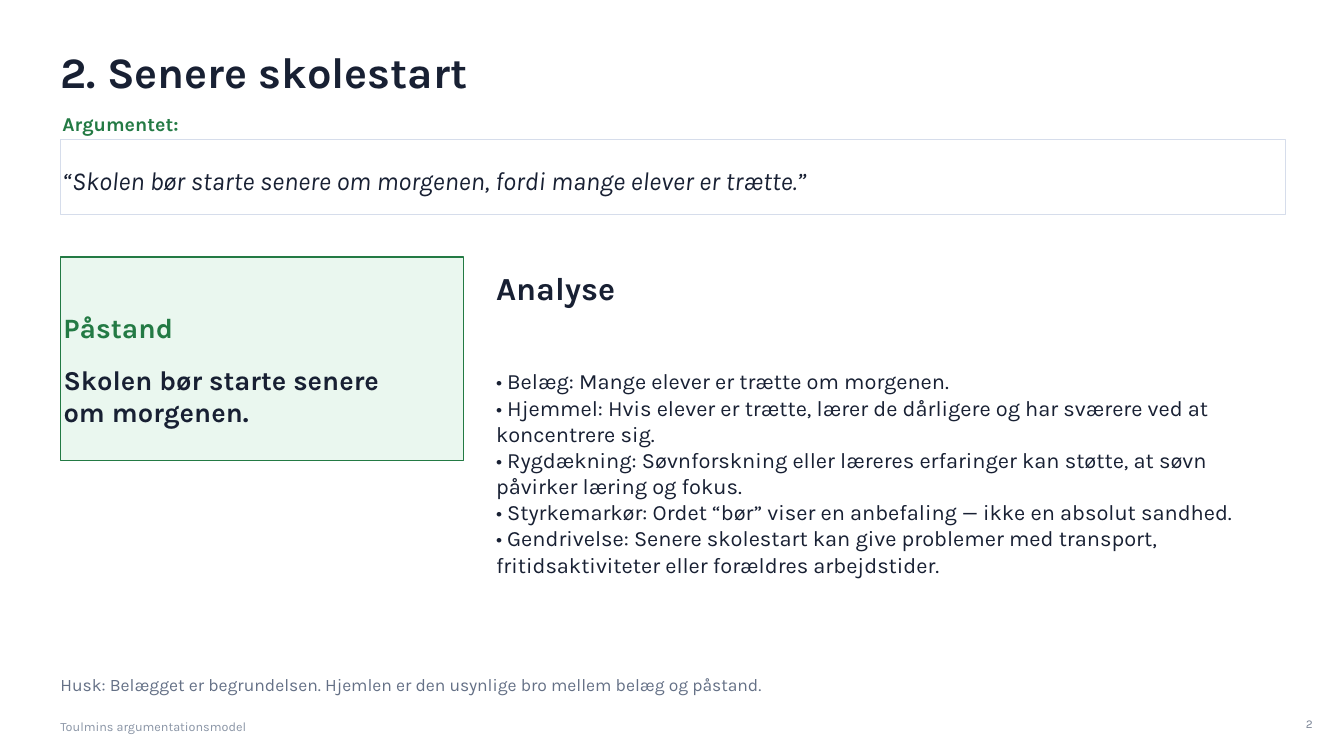
from dataclasses import dataclass

from pptx import Presentation
from pptx.dml.color import RGBColor
from pptx.enum.shapes import MSO_SHAPE as Shape
from pptx.enum.text import MSO_ANCHOR as Anchor, MSO_AUTO_SIZE as AutoSize, PP_ALIGN as Align
from pptx.slide import Slide
from pptx.text.text import TextFrame
from pptx.util import Inches, Pt

FONT = "Karla"
INK = RGBColor(0x18, 0x20, 0x33)
GREEN = RGBColor(0x23, 0x7A, 0x44)
PALE_GREEN = RGBColor(0xEA, 0xF7, 0xEF)
WHITE = RGBColor(0xFF, 0xFF, 0xFF)
BORDER = RGBColor(0xD6, 0xDD, 0xEB)
SLATE = RGBColor(0x64, 0x70, 0x86)
FOOTER_GREY = RGBColor(0x89, 0x94, 0xA5)
NUMBER_GREY = RGBColor(0x79, 0x83, 0x95)

MARGIN = 0.6
LABEL_LEFT = 0.62
CLAIM_LEFT = 0.63
ANALYSIS_LEFT = 4.92


@dataclass(frozen=True)
class Area:
    left: float
    top: float
    width: float
    height: float

    def lengths(self) -> tuple[Inches, Inches, Inches, Inches]:
        return Inches(self.left), Inches(self.top), Inches(self.width), Inches(self.height)


@dataclass(frozen=True)
class Panel:
    area: Area
    fill: RGBColor
    border: RGBColor
    border_width: float


@dataclass(frozen=True)
class Label:
    area: Area
    lines: tuple[str, ...]
    size: float
    color: RGBColor = INK
    bold: bool = False
    italic: bool = False
    align: Align = Align.LEFT


TITLE = Label(Area(MARGIN, 0.43, 8.8, 0.56), ("2. Senere skolestart",), 31, bold=True)

PANELS = (
    Panel(Area(MARGIN, 1.38, 12.15, 0.75), WHITE, BORDER, 0.8),
    Panel(Area(MARGIN, 2.55, 4, 2.02), PALE_GREEN, GREEN, 1),
)

ANALYSIS = (
    "• Belæg: Mange elever er trætte om morgenen.",
    "• Hjemmel: Hvis elever er trætte, lærer de dårligere og har sværere ved at koncentrere sig.",
    "• Rygdækning: Søvnforskning eller læreres erfaringer kan støtte, at søvn påvirker læring og fokus.",
    "• Styrkemarkør: Ordet “bør” viser en anbefaling — ikke en absolut sandhed.",
    "• Gendrivelse: Senere skolestart kan give problemer med transport, "
    "fritidsaktiviteter eller forældres arbejdstider.",
)

LABELS = (
    # Argument
    Label(Area(LABEL_LEFT, 1.12, 3, 0.22), ("Argumentet:",), 14, GREEN, bold=True),
    Label(Area(LABEL_LEFT, 1.64, 12.1, 0.3),
          ("“Skolen bør starte senere om morgenen, fordi mange elever er trætte.”",),
          18.5, italic=True),
    # Claim
    Label(Area(CLAIM_LEFT, 3.05, 3.5, 0.4), ("Påstand",), 20, GREEN, bold=True),
    Label(Area(CLAIM_LEFT, 3.55, 3.85, 0.75),
          ("Skolen bør starte senere", "om morgenen."), 19.5, bold=True),
    # Analysis
    Label(Area(ANALYSIS_LEFT, 2.63, 3.1, 0.45), ("Analyse",), 23, bold=True),
    Label(Area(ANALYSIS_LEFT, 3.55, 7.5, 2.28), ANALYSIS, 15.6),
    # Reminder and footer
    Label(Area(MARGIN, 6.67, 10.7, 0.25),
          ("Husk: Belægget er begrundelsen. Hjemlen er den usynlige bro mellem belæg og påstand.",),
          12.5, SLATE),
    Label(Area(MARGIN, 7.12, 2.7, 0.17), ("Toulmins argumentationsmodel",), 9, FOOTER_GREY),
    Label(Area(12.92, 7.08, 0.1, 0.2), ("2",), 8.5, NUMBER_GREY, align=Align.RIGHT),
)


def write_text(frame: TextFrame, label: Label) -> None:
    frame.word_wrap = True
    frame.auto_size = AutoSize.NONE
    frame.vertical_anchor = Anchor.MIDDLE
    frame.margin_left = frame.margin_right = frame.margin_top = frame.margin_bottom = 0
    frame.text = "\n".join(label.lines)
    for para in frame.paragraphs:
        para.alignment = label.align
        for span in para.runs:
            span.font.name = FONT
            span.font.size = Pt(label.size)
            span.font.bold = label.bold
            span.font.italic = label.italic
            span.font.color.rgb = label.color


def add_title(page: Slide, label: Label) -> None:
    title = page.shapes.title
    title.left, title.top, title.width, title.height = label.area.lengths()
    write_text(title.text_frame, label)


def add_panel(page: Slide, panel: Panel) -> None:
    box = page.shapes.add_shape(Shape.RECTANGLE, *panel.area.lengths())
    box.shadow.inherit = False
    box.fill.solid()
    box.fill.fore_color.rgb = panel.fill
    box.line.color.rgb = panel.border
    box.line.width = Pt(panel.border_width)


def add_label(page: Slide, label: Label) -> None:
    box = page.shapes.add_textbox(*label.area.lengths())
    write_text(box.text_frame, label)


def main() -> None:
    deck = Presentation()
    deck.slide_width, deck.slide_height = Inches(13.33), Inches(7.5)
    page = deck.slides.add_slide(deck.slide_layouts.get_by_name("Title Only"))
    page.background.fill.solid()
    page.background.fill.fore_color.rgb = WHITE

    add_title(page, TITLE)
    for panel in PANELS:
        add_panel(page, panel)
    for label in LABELS:
        add_label(page, label)

    deck.save("out.pptx")


if __name__ == "__main__":
    main()
